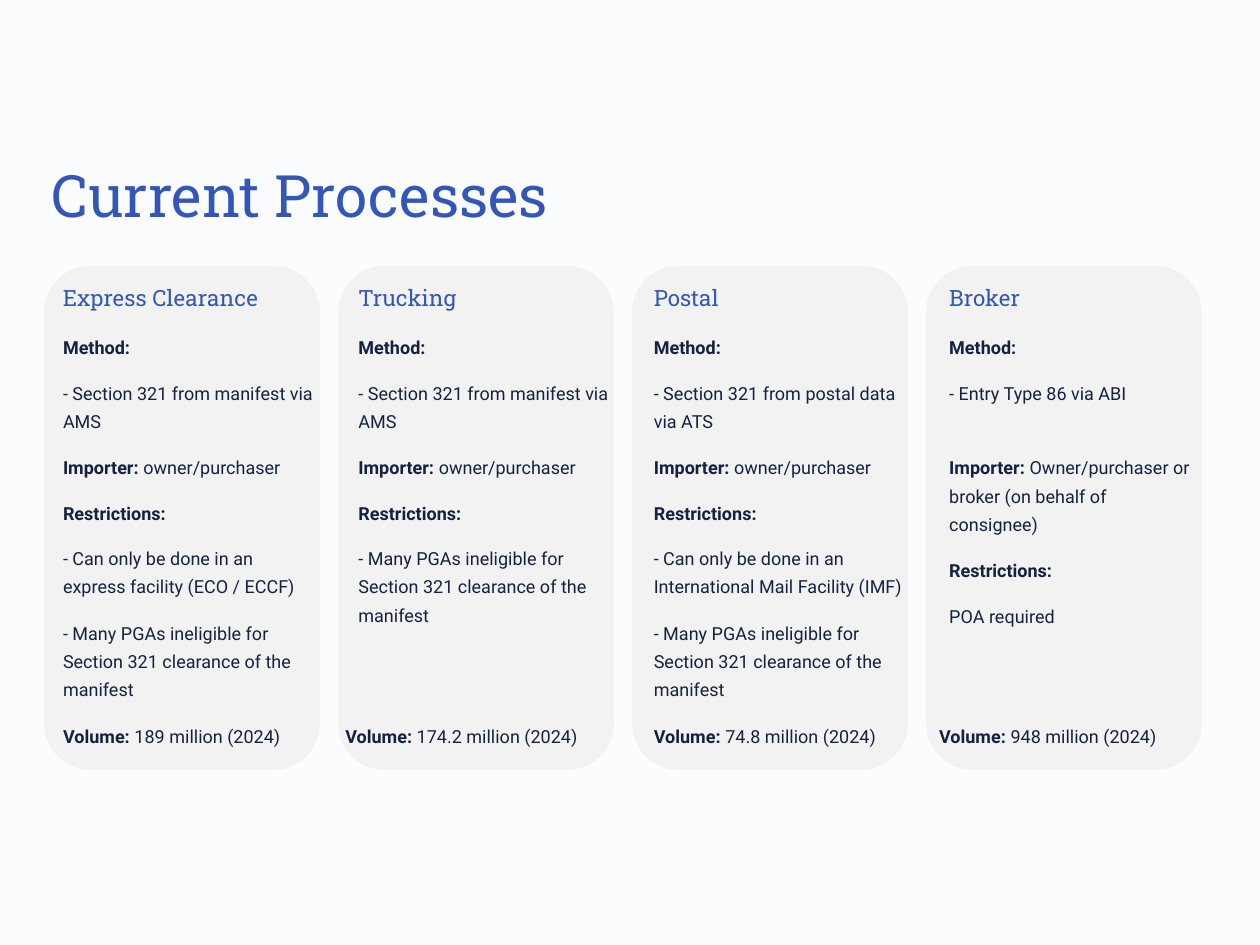
import pptx
import pptx.util
import pptx.dml.color
import pptx.enum.shapes
import pptx.enum.text

Pt = pptx.util.Pt

# Each row: bold label, plain text, number of lines it takes up
METHOD = ("Method:", "", 1)
OWNER = ("Importer:", " owner/purchaser", 1)
LIMITS = ("Restrictions:", "", 1)
MANIFEST = ("", "- Section 321 from manifest via AMS", 2)
AGENCIES = ("", "- Many PGAs ineligible for Section 321 clearance of the manifest", 3)

# Each card: heading, rows, volume, shift of the volume line
CARDS = [
    ("Express Clearance",
     [METHOD, MANIFEST, OWNER, LIMITS,
      ("", "- Can only be done in an express facility (ECO / ECCF)", 2),
      AGENCIES],
     " 189 million (2024)", 0),
    ("Trucking",
     [METHOD, MANIFEST, OWNER, LIMITS, AGENCIES],
     " 174.2 million (2024)", -7.5),
    ("Postal",
     [METHOD, ("", "- Section 321 from postal data via ATS", 2), OWNER, LIMITS,
      ("", "- Can only be done in an International Mail Facility (IMF)", 2),
      AGENCIES],
     " 74.8 million (2024)", 0),
    ("Broker",
     [METHOD, ("", "- Entry Type 86 via ABI", 2),
      ("Importer:", " Owner/purchaser or broker (on behalf of consignee)", 3),
      LIMITS, ("", "POA required", 1)],
     " 948 million (2024)", -5.8),
]

BLUE, NAVY, GREY, PAPER = "3257B8", "15213F", "F2F2F2", "FBFCFE"
CARD_X, CARD_Y, CARD_W, CARD_H, CARD_STEP = 25.9, 152.6, 156.2, 286.6, 168
TEXT_X, TEXT_W, TEXT_STEP = 36, 143.3, 168.8
HEAD_Y, ROW_Y, VOLUME_Y = 162, 188.6, 410.6
LINE, GAP = 16.5, 9.5


def paint(fmt, color):
    """Give a fill a solid colour."""
    fmt.solid()
    fmt.fore_color.rgb = pptx.dml.color.RGBColor.from_string(color)


def write(shape, bold, plain, font, size, color, pitch):
    """Put an optional bold label and plain text into a shape."""
    frame = shape.text_frame
    frame.word_wrap = True
    frame.auto_size = pptx.enum.text.MSO_AUTO_SIZE.NONE
    frame.vertical_anchor = pptx.enum.text.MSO_ANCHOR.TOP
    frame.margin_left = frame.margin_right = 0
    frame.margin_top = frame.margin_bottom = 0
    para = frame.paragraphs[0]
    para.alignment = pptx.enum.text.PP_ALIGN.LEFT
    para.line_spacing = Pt(pitch)
    para.font.name = font
    para.font.size = Pt(size)
    paint(para.font.fill, color)
    for text, heavy in ((bold, True), (plain, False)):
        if text:
            run = para.add_run()
            run.text = text
            run.font.bold = heavy


def add_text(slide, x, y, w, h, *style):
    box = slide.shapes.add_textbox(Pt(x), Pt(y), Pt(w), Pt(h))
    write(box, *style)


def add_row(slide, x, y, bold, plain, lines):
    add_text(slide, x, y, TEXT_W, lines * LINE,
             bold, plain, "Roboto", 10.3, NAVY, 16.2)


def add_card(slide, i, head, rows, volume, shift):
    card = slide.shapes.add_shape(
        pptx.enum.shapes.MSO_SHAPE.ROUNDED_RECTANGLE,
        Pt(CARD_X + i * CARD_STEP), Pt(CARD_Y), Pt(CARD_W), Pt(CARD_H))
    card.shadow.inherit = False
    paint(card.fill, GREY)
    paint(card.line.fill, GREY)
    card.line.width = Pt(1.5)

    x = TEXT_X + i * TEXT_STEP
    add_text(slide, x, HEAD_Y, 129.6, 15.9,
             "", head, "Roboto Slab", 12.8, BLUE, 15.9)
    y = ROW_Y
    for bold, plain, lines in rows:
        add_row(slide, x, y, bold, plain, lines)
        y += lines * LINE + GAP
    add_row(slide, x + shift, VOLUME_Y, "Volume:", volume, 1)


def main():
    deck = pptx.Presentation()
    deck.slide_width, deck.slide_height = Pt(720), Pt(540)
    slide = deck.slides.add_slide(deck.slide_layouts[5])
    paint(slide.background.fill, PAPER)

    title = slide.shapes.title
    title.left, title.top = Pt(29.5), Pt(89.3)
    title.width, title.height = Pt(690), Pt(41.8)
    write(title, "", "Current Processes", "Roboto Slab", 33.4, BLUE, 41.6)

    for i, card in enumerate(CARDS):
        add_card(slide, i, *card)
    deck.save("out.pptx")


if __name__ == "__main__":
    main()
